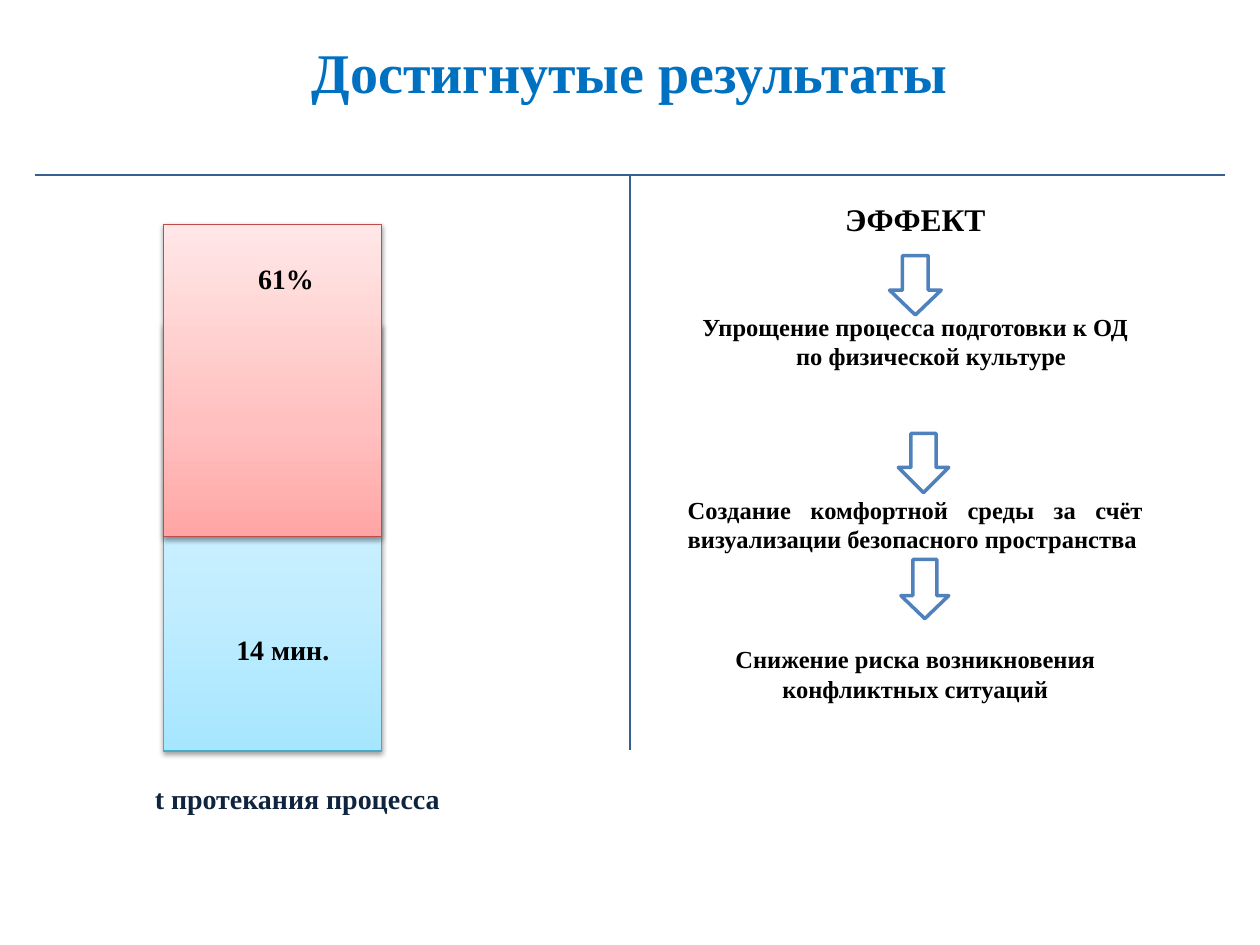
from lxml import etree
from pptx import Presentation
from pptx.dml.color import RGBColor
from pptx.enum.shapes import MSO_CONNECTOR as CONN, MSO_SHAPE as SHAPE
from pptx.enum.text import MSO_ANCHOR as ANCHOR, PP_ALIGN as ALIGN
from pptx.oxml import parse_xml
from pptx.oxml.ns import nsdecls, qn
from pptx.util import Inches, Pt

FONT = "Times New Roman"
BLACK = RGBColor(0x00, 0x00, 0x00)
WHITE = RGBColor(0xFF, 0xFF, 0xFF)
TITLE_BLUE = RGBColor(0x00, 0x70, 0xC0)
NAVY = RGBColor(0x0F, 0x24, 0x3E)
RULE_BLUE = RGBColor(0x37, 0x60, 0x92)
ARROW_BLUE = RGBColor(0x4F, 0x81, 0xBD)
BAR_BLUE_LINE = RGBColor(0x46, 0xAA, 0xC5)
BAR_RED_LINE = RGBColor(0xBF, 0x4C, 0x48)
# Gradient colours, from the bottom of a bar to its top
BLUES = [RGBColor(0xA7, 0xE6, 0xFF), RGBColor(0xC1, 0xED, 0xFF), RGBColor(0xE7, 0xF8, 0xFF)]
REDS = [RGBColor(0xFF, 0xA6, 0xA5), RGBColor(0xFF, 0xC0, 0xBF), RGBColor(0xFF, 0xE7, 0xE7)]
STOPS = [0, 35, 100]


def add_paragraph(p, text, size=16, color=BLACK, align=ALIGN.CENTER, before=0, hanging=0):
    p.alignment = align
    p.space_before = Pt(before)
    if hanging:
        pPr = p._p.get_or_add_pPr()
        pPr.set("marL", str(Inches(hanging)))
        pPr.set("indent", str(-Inches(hanging)))
    r = p.add_run()
    r.text = text
    r.font.name = FONT
    r.font.size = Pt(size)
    r.font.bold = True
    r.font.color.rgb = color


def add_box(s, x, y, w, h, anchor=ANCHOR.TOP):
    tf = s.shapes.add_textbox(Inches(x), Inches(y), Inches(w), Inches(h)).text_frame
    tf.word_wrap = True
    tf.vertical_anchor = anchor
    return tf


def add_text(s, text, x, y, w, h, anchor=ANCHOR.TOP, **fmt):
    add_paragraph(add_box(s, x, y, w, h, anchor).paragraphs[0], text, **fmt)


def add_rule(s, x1, y1, x2, y2):
    line = s.shapes.add_connector(CONN.STRAIGHT, Inches(x1), Inches(y1), Inches(x2), Inches(y2))
    line.line.color.rgb = RULE_BLUE
    line.line.width = Pt(1.5)
    etree.SubElement(line._element.spPr, qn("a:effectLst"))


def add_bar(s, x, y, w, h, colors, line_color):
    sp = s.shapes.add_shape(SHAPE.RECTANGLE, Inches(x), Inches(y), Inches(w), Inches(h))
    sp.line.color.rgb = line_color
    sp.line.width = Pt(0.75)
    # Three-stop gradient running upwards
    stops = "".join(f'<a:gs pos="{pos * 1000}"><a:srgbClr val="{c}"/></a:gs>'
                    for pos, c in zip(STOPS, colors))
    sp._element.spPr.find(qn("a:prstGeom")).addnext(parse_xml(
        f'<a:gradFill rotWithShape="1" {nsdecls("a")}><a:gsLst>{stops}</a:gsLst>'
        '<a:lin ang="16200000" scaled="0"/></a:gradFill>'))
    # Soft shadow below the bar
    sp._element.spPr.append(parse_xml(
        f'<a:effectLst {nsdecls("a")}><a:outerShdw blurRad="{Pt(3.1)}" dist="{Pt(1.6)}" '
        'dir="5400000" rotWithShape="0"><a:srgbClr val="000000"><a:alpha val="38000"/>'
        '</a:srgbClr></a:outerShdw></a:effectLst>'))


def add_arrow(s, x, y, w, head=0.48):
    sp = s.shapes.add_shape(SHAPE.DOWN_ARROW, Inches(x), Inches(y), Inches(w), Inches(0.47))
    sp.adjustments[1] = head
    sp.shadow.inherit = False
    sp.fill.solid()
    sp.fill.fore_color.rgb = WHITE
    sp.line.color.rgb = ARROW_BLUE
    sp.line.width = Pt(2)


def add_effects(s):
    # The space before each effect leaves room for its arrow
    effects = [
        ("ЭФФЕКТ", dict(size=18)),
        ("Упрощение процесса подготовки к ОД по физической культуре",
         dict(size=14, before=42, hanging=0.25)),
        ("Создание комфортной среды за счёт визуализации безопасного пространства",
         dict(size=14, before=71, align=ALIGN.JUSTIFY)),
        ("Снижение риска возникновения конфликтных ситуаций", dict(size=14, before=52)),
    ]
    tf = add_box(s, 5.36, 1.54, 3.81, 4.78)
    for i, (text, fmt) in enumerate(effects):
        p = tf.add_paragraph() if i else tf.paragraphs[0]
        add_paragraph(p, text, **fmt)


def main():
    prs = Presentation()
    prs.slide_width, prs.slide_height = Inches(10), Inches(7.5)
    s = prs.slides.add_slide(prs.slide_layouts[6])

    # Title and dividing rules
    add_text(s, "Достигнутые результаты", 0.12, 0.21, 9.76, 0.71,
             anchor=ANCHOR.MIDDLE, size=32, color=TITLE_BLUE)
    add_rule(s, 0.28, 1.39, 9.72, 1.39)
    add_rule(s, 5, 1.39, 5, 5.95)

    # Process time: the red bar covers the upper part of the blue one
    add_bar(s, 1.3, 2.57, 1.73, 3.39, BLUES, BAR_BLUE_LINE)
    add_bar(s, 1.3, 1.78, 1.73, 2.48, REDS, BAR_RED_LINE)
    add_text(s, "61%", 1.52, 2.03, 1.5, 0.37)
    add_text(s, "14 мин.", 1.46, 3.91, 1.57, 1.43, anchor=ANCHOR.BOTTOM)
    add_text(s, "t протекания процесса", 1.06, 6.15, 2.6, 0.37, color=NAVY)

    # Effects, each led by an arrow
    add_arrow(s, 7.06, 2.03, 0.41)
    add_arrow(s, 7.13, 3.44, 0.4, head=0.5)
    add_arrow(s, 7.15, 4.44, 0.38)
    add_effects(s)

    prs.save("out.pptx")


if __name__ == "__main__":
    main()
